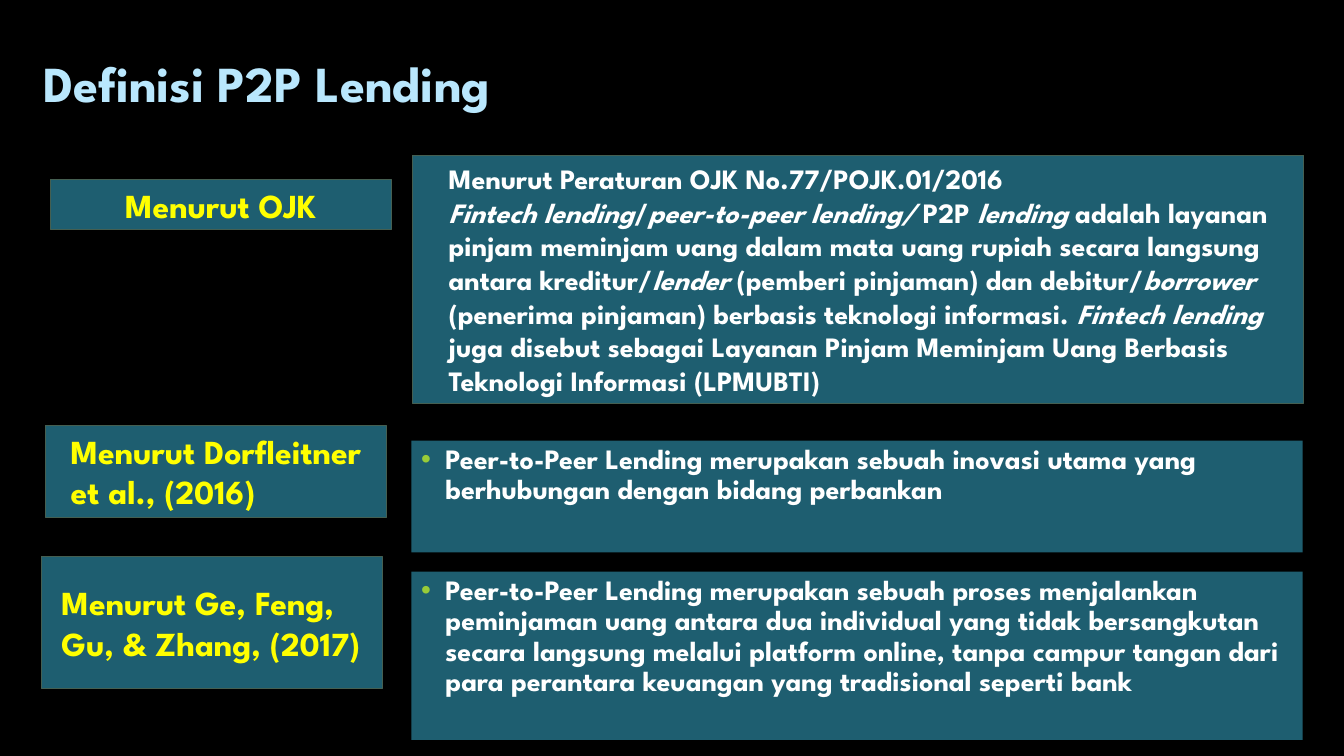
import pptx
import pptx.util
import pptx.dml.color
import pptx.enum.shapes
import pptx.enum.text
import pptx.oxml

FONT = "League Spartan"
BLACK, TEAL, EDGE = "000000", "1E5E70", "455F51"
WHITE, YELLOW, SKY, GREEN = "FFFFFF", "FFFF00", "B9E7FD", "99CB38"
WIDTH, HEIGHT = 13.33, 7.5
LABEL_WIDTH, BODY_WIDTH = 3.38, 8.84

TITLE = "Definisi P2P Lending"
OJK = [
    [("Menurut Peraturan OJK No.77/POJK.01/2016", False)],
    [
        ("Fintech lending", True),
        ("/", False),
        ("peer-to-peer lending/ ", True),
        ("P2P", False),
        (" lending ", True),
        ("adalah layanan pinjam meminjam uang dalam mata uang rupiah secara "
         "langsung antara kreditur/", False),
        ("lender ", True),
        ("(pemberi pinjaman) dan debitur/", False),
        ("borrower ", True),
        ("(penerima pinjaman) berbasis teknologi informasi. ", False),
        ("Fintech lending", True),
        (" juga disebut sebagai Layanan Pinjam Meminjam Uang Berbasis "
         "Teknologi Informasi (LPMUBTI)", False),
    ],
]
DORFLEITNER = [[("Peer-to-Peer Lending merupakan sebuah inovasi utama yang "
                 "berhubungan dengan bidang perbankan", False)]]
GE = [[("Peer-to-Peer Lending merupakan sebuah proses menjalankan peminjaman "
        "uang antara dua individual yang tidak bersangkutan secara langsung "
        "melalui platform online, tanpa campur tangan dari para perantara "
        "keuangan yang tradisional seperti bank", False)]]

LABELS = [
    ("Menurut OJK", 0.5, 1.78, 0.5, 0.1, "CENTER"),
    ("Menurut Dorfleitner et al., (2016)", 0.45, 4.22, 0.91, 0.25, "LEFT"),
    ("Menurut Ge, Feng, Gu, & Zhang, (2017)", 0.41, 5.52, 1.31, 0.2, "LEFT"),
]
BODIES = [
    (OJK, 4.09, 1.54, 2.46, False),
    (DORFLEITNER, 4.08, 4.37, 1.11, True),
    (GE, 4.08, 5.67, 1.67, True),
]


def color(value):
    return pptx.dml.color.RGBColor.from_string(value)


def set_all(target, values):
    for name, value in values.items():
        setattr(target, name, value)


def add_bullet(para):
    properties = para._p.get_or_add_pPr()
    properties.set("marL", str(pptx.util.Inches(0.24)))
    properties.set("indent", str(-pptx.util.Inches(0.24)))
    space = 'xmlns:a="http://schemas.openxmlformats.org/drawingml/2006/main"'
    for element in (f'<a:buClr {space}><a:srgbClr val="{GREEN}"/></a:buClr>',
                    f'<a:buFont {space} typeface="Arial"/>',
                    f'<a:buChar {space} char="•"/>'):
        properties.append(pptx.oxml.parse_xml(element))
    para.line_spacing = 0.9


def write(box, paragraphs, size, ink, anchor, inset=0.1, align="LEFT", bullet=False):
    frame = box.text_frame
    set_all(frame, {
        "word_wrap": True,
        "vertical_anchor": getattr(pptx.enum.text.MSO_ANCHOR, anchor),
        "margin_left": pptx.util.Inches(inset),
        "margin_right": pptx.util.Inches(0.1),
    })
    for number, spans in enumerate(paragraphs):
        para = frame.add_paragraph() if number else frame.paragraphs[0]
        para.alignment = getattr(pptx.enum.text.PP_ALIGN, align)
        if bullet:
            add_bullet(para)
        for text, italic in spans:
            span = para.add_run()
            span.text = text
            set_all(span.font, {"name": FONT, "size": pptx.util.Pt(size),
                                "bold": True, "italic": italic})
            span.font.color.rgb = color(ink)


def add_panel(page, left, top, width, height, outlined):
    box = page.shapes.add_shape(
        pptx.enum.shapes.MSO_SHAPE.RECTANGLE,
        *map(pptx.util.Inches, (left, top, width, height)))
    box.shadow.inherit = False
    box.fill.solid()
    box.fill.fore_color.rgb = color(TEAL)
    if outlined:
        box.line.color.rgb = color(EDGE)
        box.line.width = pptx.util.Pt(0.75)
    else:
        box.line.fill.background()
    return box


def main():
    deck = pptx.Presentation()
    set_all(deck, {"slide_width": pptx.util.Inches(WIDTH),
                   "slide_height": pptx.util.Inches(HEIGHT)})
    page = deck.slides.add_slide(deck.slide_layouts[6])
    page.background.fill.solid()
    page.background.fill.fore_color.rgb = color(BLACK)

    title = page.shapes.add_textbox(
        *map(pptx.util.Inches, (0.33, 0.42, 0.85 * WIDTH, 0.1 * HEIGHT)))
    write(title, [[(TITLE, False)]], 36, SKY, "BOTTOM")
    title.text_frame.paragraphs[0].line_spacing = 0.9

    for paragraphs, left, top, height, bullet in BODIES:
        box = add_panel(page, left, top, BODY_WIDTH, height, not bullet)
        write(box, paragraphs, 20, WHITE, "TOP" if bullet else "MIDDLE",
              0.1 if bullet else 0.36, bullet=bullet)
    for text, left, top, height, inset, align in LABELS:
        box = add_panel(page, left, top, LABEL_WIDTH, height, True)
        write(box, [[(text, False)]], 24, YELLOW, "MIDDLE", inset, align)

    deck.save("out.pptx")


if __name__ == "__main__":
    main()
